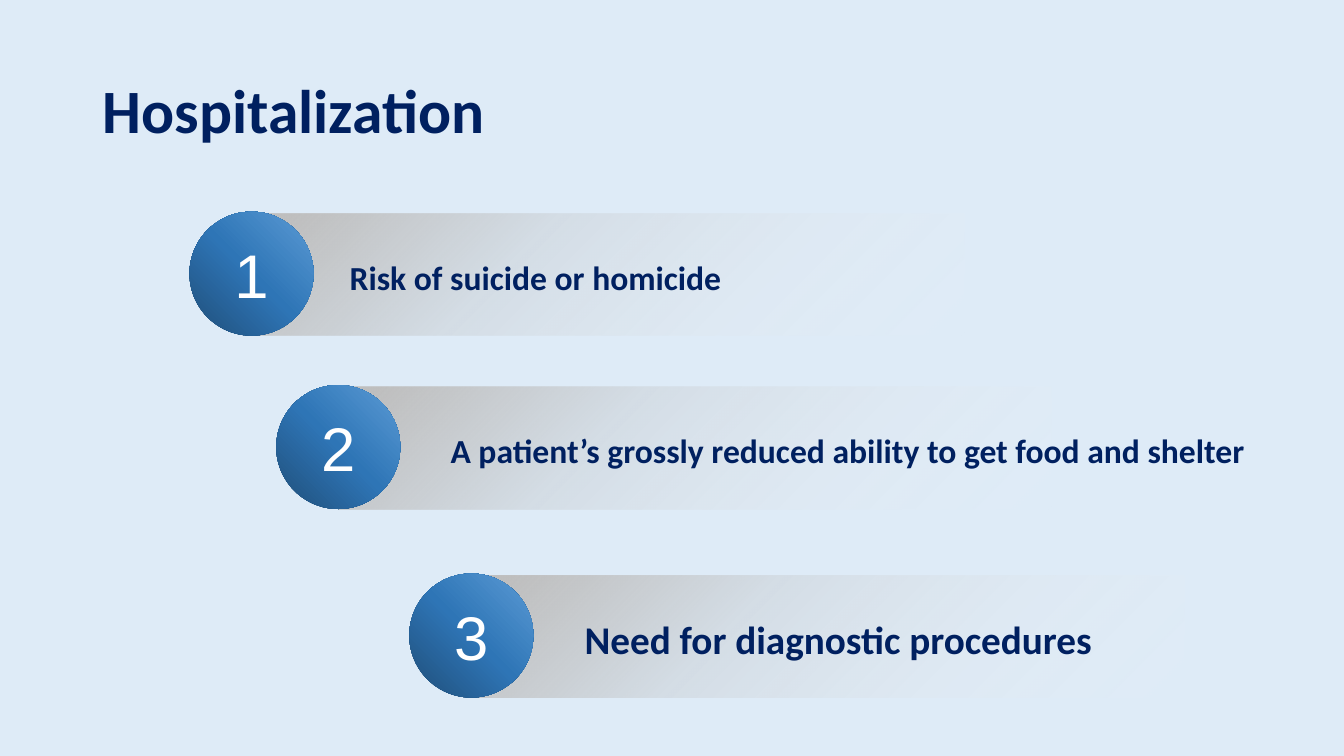
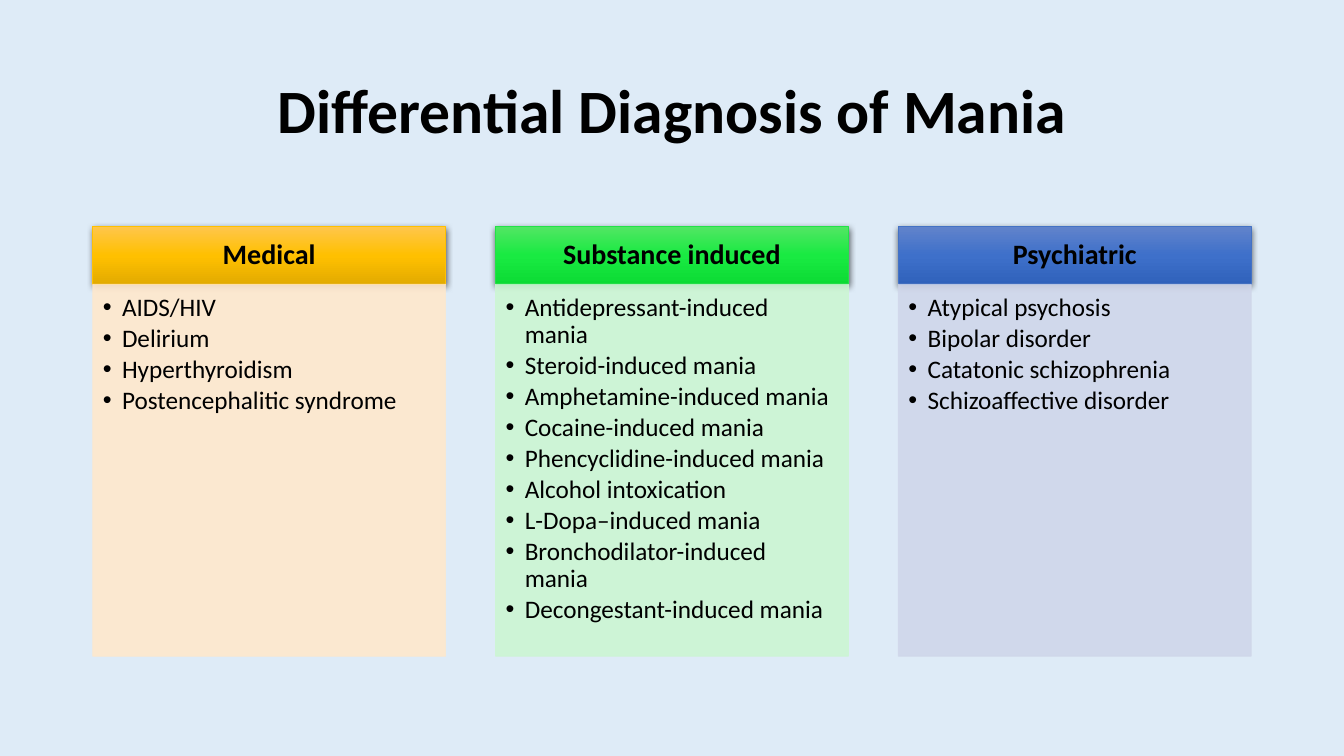
from lxml import etree
from pptx import Presentation
from pptx.dml.color import RGBColor
from pptx.enum.shapes import MSO_SHAPE
from pptx.enum.text import MSO_ANCHOR, MSO_AUTO_SIZE, PP_ALIGN
from pptx.oxml.ns import qn
from pptx.util import Inches, Pt

RECTANGLE, OVAL = MSO_SHAPE.RECTANGLE, MSO_SHAPE.OVAL
TOP, MIDDLE = MSO_ANCHOR.TOP, MSO_ANCHOR.MIDDLE
LEFT, CENTER = PP_ALIGN.LEFT, PP_ALIGN.CENTER
NO_AUTOFIT = MSO_AUTO_SIZE.NONE

# Shared look
BACKGROUND, NAVY, BLACK, WHITE = "DEEBF7", "002060", "000000", "FFFFFF"
TITLE_BOX = (0.92, 0.4, 11.5, 1.45)
DEFAULT_INSETS = (0.1, 0.05, 0.1, 0.05)
TITLE_ONLY, COMPARISON = 5, 4

# Gradient stops: position, colour, opacity (all in percent where numeric)
BAND_STOPS = [(5, "BFBFBF", 100), (37, "BFBFBF", 31), (100, WHITE, 0)]
NUMBER_STOPS = [(0, "1F4E79", 100), (50, "2E75B6", 100), (100, "5B9BD5", 100)]

# Band left and top, caption indent, caption width, caption size, caption
STEPS = [
    (2.5, 2.12, 0.87, 6.27, 24, "Risk of suicide or homicide"),
    (3.36, 3.84, 1.01, 8.52, 24,
     "A patient’s grossly reduced ability to get food and shelter"),
    (4.68, 5.71, 1.02, 5.77, 28, "Need for diagnostic procedures"),
]

# Heading, heading gradient, heading line, panel colour, entries
COLUMNS = [
    ("Medical", ("FFC64B", "FFC000", "E3AB00"), "FFC000", "FFE8CC",
     ["AIDS/HIV", "Delirium", "Hyperthyroidism",
      "Postencephalitic syndrome"]),
    ("Substance induced", ("51E663", "19EA42", "0CDB34"), "23E148", "CCF6D3",
     ["Antidepressant-induced mania", "Steroid-induced mania",
      "Amphetamine-induced mania", "Cocaine-induced mania",
      "Phencyclidine-induced mania", "Alcohol intoxication",
      "L-Dopa–induced mania", "Bronchodilator-induced mania",
      "Decongestant-induced mania"]),
    ("Psychiatric", ("6183CB", "3E70CA", "3062BB"), "4472C4", "CFD6EA",
     ["Atypical psychosis", "Bipolar disorder", "Catatonic schizophrenia",
      "Schizoaffective disorder"]),
]


def rgb(color):
    return RGBColor.from_string(color)


def inches(box):
    return [Inches(value) for value in box]


def place(shape, box):
    shape.left, shape.top, shape.width, shape.height = inches(box)


def add_color(parent, color, opacity):
    """Append a colour element with its opacity in percent."""
    element = etree.SubElement(parent, qn("a:srgbClr"), val=color)
    etree.SubElement(element, qn("a:alpha"), val=str(opacity * 1000))


def set_gradient(shape, stops, angle):
    """Fill with gradient stops; the angle runs clockwise."""
    shape.fill.gradient()
    shape.fill.gradient_angle = (360 - angle) % 360
    stop_list = shape.element.spPr.find(".//" + qn("a:gsLst"))
    for stop in list(stop_list):
        stop_list.remove(stop)
    for position, color, opacity in stops:
        stop = etree.SubElement(stop_list, qn("a:gs"), pos=str(position * 1000))
        add_color(stop, color, opacity)


def set_opacity(shape, percent):
    for color in shape.element.spPr.iter(qn("a:srgbClr")):
        etree.SubElement(color, qn("a:alpha"), val=str(percent * 1000))


def set_line(shape, color):
    shape.line.color.rgb = rgb(color)
    shape.line.width = Pt(0.5)


def add_drop_shadow(shape):
    effects = shape.element.spPr.find(qn("a:effectLst"))
    shadow = etree.SubElement(
        effects, qn("a:outerShdw"), blurRad=str(Pt(4.5)), dist=str(Pt(1.5)),
        dir="5400000", algn="ctr", rotWithShape="0")
    add_color(shadow, BLACK, 63)


def set_bullet(paragraph, indent):
    properties = paragraph._p.get_or_add_pPr()
    properties.set("marL", str(Inches(indent)))
    properties.set("indent", str(-Inches(indent)))
    etree.SubElement(properties, qn("a:buFont"), typeface="Arial")
    etree.SubElement(properties, qn("a:buChar"), char="•")


def write(shape, lines, size, color, font="Calibri", bold=False, align=LEFT,
          anchor=MIDDLE, insets=DEFAULT_INSETS, line_spacing=1.0,
          space_after=0, bullet_indent=None):
    """Write one paragraph for each line, all in the same format."""
    frame = shape.text_frame
    frame.word_wrap = True
    frame.auto_size = NO_AUTOFIT
    frame.vertical_anchor = anchor
    (frame.margin_left, frame.margin_top,
     frame.margin_right, frame.margin_bottom) = inches(insets)
    for index, line in enumerate(lines):
        paragraph = frame.add_paragraph() if index else frame.paragraphs[0]
        paragraph.alignment = align
        paragraph.line_spacing = line_spacing
        paragraph.space_before = Pt(0)
        paragraph.space_after = Pt(space_after)
        if bullet_indent:
            set_bullet(paragraph, bullet_indent)
        run = paragraph.add_run()
        run.text = line
        run.font.name, run.font.size, run.font.bold = font, Pt(size), bold
        run.font.color.rgb = rgb(color)


def add_gradient_shape(shapes, kind, box, stops, angle):
    shape = shapes.add_shape(kind, *inches(box))
    shape.shadow.inherit = False
    shape.line.fill.background()
    set_gradient(shape, stops, angle)
    return shape


def add_slide(presentation, layout, title, color, align):
    slide = presentation.slides.add_slide(presentation.slide_layouts[layout])
    place(slide.shapes.title, TITLE_BOX)
    write(slide.shapes.title, [title], 44, color, bold=True, align=align,
          line_spacing=0.9)
    return slide


def add_step(slide, box, number, caption, indent, caption_width, size):
    """A fading band with a numbered circle over its left end."""
    left, top, _, height = box
    shapes = slide.shapes.add_group_shape().shapes
    add_gradient_shape(shapes, RECTANGLE, box, BAND_STOPS, 45)
    text_box = shapes.add_textbox(
        *inches((left + indent, top + 0.02, caption_width, height)))
    write(text_box, [caption], size, NAVY, bold=True)
    circle = add_gradient_shape(
        shapes, OVAL, (left - 0.62, top - 0.02, 1.23, 1.23), NUMBER_STOPS, 315)
    write(circle, [str(number)], 44, WHITE, font="Arial", align=CENTER,
          insets=(0.08, 0.1, 0.08, 0.1))


def add_column(slide, panel, box, heading, gradient, line, fill, entries):
    """A heading bar above a panel that holds a bulleted list."""
    left, top, width, height = box
    bar_height = 0.57
    stops = [(50 * index, color, 100) for index, color in enumerate(gradient)]
    bar = add_gradient_shape(slide.shapes, RECTANGLE,
                             (left, top, width, bar_height), stops, 90)
    set_line(bar, line)
    add_drop_shadow(bar)
    write(bar, [heading], 20, BLACK, bold=True, align=CENTER,
          insets=(0.16, 0.09, 0.16, 0.09), line_spacing=0.9)

    # The panel covers the lower part of the bar's shadow
    slide.shapes.element.append(panel.element)
    place(panel, (left, top + bar_height, width, height - bar_height))
    panel.fill.solid()
    panel.fill.fore_color.rgb = rgb(fill)
    set_line(panel, fill)
    set_opacity(panel, 90)
    write(panel, entries, 18, BLACK, anchor=TOP, insets=(0.1, 0.1, 0.14, 0.16),
          line_spacing=0.9, space_after=2.7, bullet_indent=0.19)


def build_hospitalization(presentation):
    slide = add_slide(presentation, TITLE_ONLY, "Hospitalization", NAVY, LEFT)
    for number, step in enumerate(STEPS, 1):
        left, top, indent, caption_width, size, caption = step
        add_step(slide, (left, top, 7.07, 1.21), number, caption, indent,
                 caption_width, size)


def build_differential_diagnosis(presentation):
    slide = add_slide(presentation, COMPARISON,
                      "Differential Diagnosis of Mania", BLACK, CENTER)
    panels = list(slide.placeholders)[1:]
    for unused in panels[len(COLUMNS):]:
        slide.shapes.element.remove(unused.element)
    left, span, width = 0.92, 11.49, 3.5
    step = (span - width) / (len(COLUMNS) - 1)
    for index, (panel, column) in enumerate(zip(panels, COLUMNS)):
        add_column(slide, panel, (left + index * step, 2.25, width, 4.26),
                   *column)


def main():
    presentation = Presentation()
    presentation.slide_width = Inches(13.33)
    presentation.slide_height = Inches(7.5)
    background = presentation.slide_master.background.fill
    background.solid()
    background.fore_color.rgb = rgb(BACKGROUND)
    build_hospitalization(presentation)
    build_differential_diagnosis(presentation)
    presentation.save("out.pptx")


if __name__ == "__main__":
    main()
